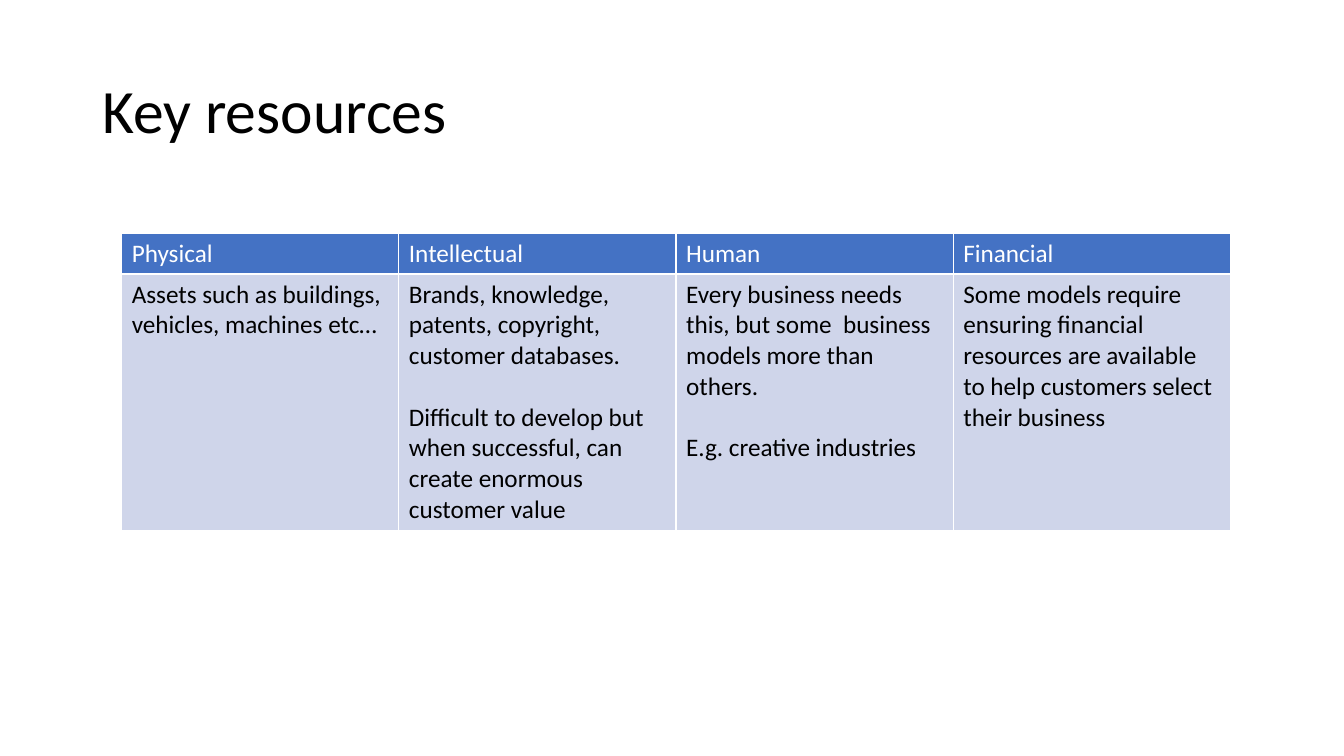
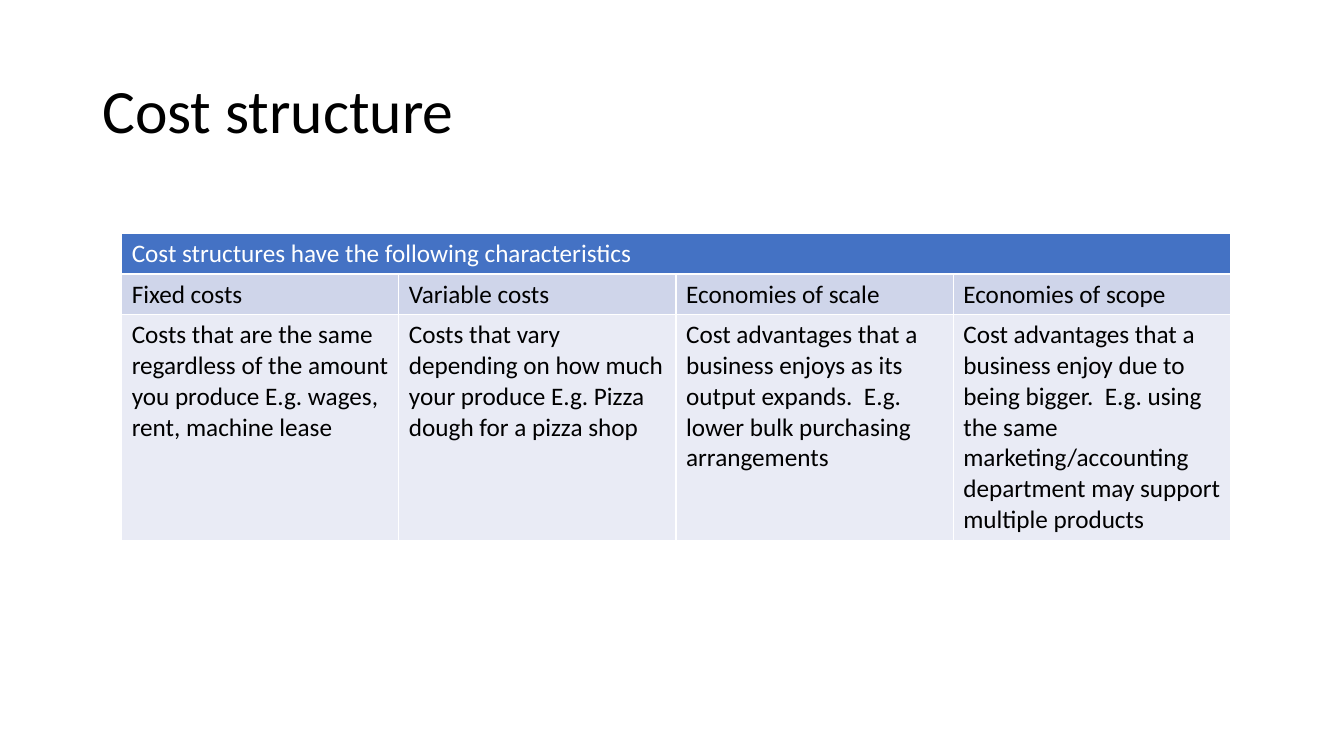
from lxml.etree import SubElement
from pptx import Presentation
from pptx.dml.color import RGBColor
from pptx.enum.text import MSO_ANCHOR
from pptx.oxml.ns import qn
from pptx.util import Pt

COLOURS = {
    "text": "000000",
    "header": "4472C4",
    "light": "FFFFFF",
    "band": "CFD5EA",
    "pale band": "E9EBF5",
}
FONT = "Calibri"
ROW_FILLS = ["header", "band", "pale band"]
COLUMN_WIDTH = 198
HEADING_HEIGHT = 29.2
BLANK_LINE = 22

# Each cell is a list of paragraphs; a row with one cell spans the table.
SLIDES = [
    {
        "title": "Key resources",
        "body height": 183,
        "rows": [
            [["Physical"], ["Intellectual"], ["Human"], ["Financial"]],
            [
                ["Assets such as buildings, vehicles, machines etc…"],
                ["Brands, knowledge, patents, copyright, customer databases.",
                 "Difficult to develop but when successful, can create enormous customer value"],
                ["Every business needs this, but some  business models more than others.",
                 "E.g. creative industries"],
                ["Some models require ensuring financial resources are available "
                 "to help customers select their business"],
            ],
        ],
    },
    {
        "title": "Cost structure",
        "body height": 161,
        "rows": [
            [["Cost structures have the following characteristics"]],
            [["Fixed costs"], ["Variable costs"], ["Economies of scale"], ["Economies of scope"]],
            [
                ["Costs that are the same regardless of the amount you produce "
                 "E.g. wages, rent, machine lease"],
                ["Costs that vary depending on how much your produce "
                 "E.g. Pizza dough for a pizza shop"],
                ["Cost advantages that a business enjoys as its output expands.  "
                 "E.g. lower bulk purchasing arrangements"],
                ["Cost advantages that a business enjoy due to being bigger.  "
                 "E.g. using the same marketing/accounting department "
                 "may support multiple products"],
            ],
        ],
    },
]


def add_span(para, text, size, colour):
    span = para.add_run()
    span.text = text
    span.font.name = FONT
    span.font.size = Pt(size)
    span.font.bold = False
    span.font.color.rgb = RGBColor.from_string(COLOURS[colour])


def style_cell(cell, fill):
    """Give a cell thin white borders and a solid fill."""
    properties = cell._tc.get_or_add_tcPr()
    for side in ("a:lnL", "a:lnR", "a:lnT", "a:lnB"):
        line = SubElement(properties, qn(side), w=str(Pt(1)))
        solid = SubElement(line, qn("a:solidFill"))
        SubElement(solid, qn("a:srgbClr"), val=COLOURS["light"])
    cell.fill.solid()
    cell.fill.fore_color.rgb = RGBColor.from_string(COLOURS[fill])


deck = Presentation()
deck.slide_width = Pt(960)
deck.slide_height = Pt(540)

for content in SLIDES:
    page = deck.slides.add_slide(deck.slide_layouts[6])

    title_box = page.shapes.add_textbox(Pt(66), Pt(28.75), Pt(828), Pt(104.4))
    title_box.text_frame.word_wrap = True
    title_box.text_frame.vertical_anchor = MSO_ANCHOR.MIDDLE
    title_para = title_box.text_frame.paragraphs[0]
    title_para.line_spacing = 0.9
    add_span(title_para, content["title"], 44, "text")

    rows = content["rows"]
    column_count = len(rows[-1])
    heights = [HEADING_HEIGHT] * (len(rows) - 1) + [content["body height"]]
    table = page.shapes.add_table(
        len(rows), column_count, Pt(86.9), Pt(166.5),
        Pt(COLUMN_WIDTH * column_count), Pt(sum(heights)),
    ).table
    table.horz_banding = False
    for column in table.columns:
        column.width = Pt(COLUMN_WIDTH)

    for row_index, (row, height, fill) in enumerate(zip(rows, heights, ROW_FILLS)):
        table.rows[row_index].height = Pt(height)
        for column_index in range(column_count):
            style_cell(table.cell(row_index, column_index), fill)
        if len(row) == 1:
            table.cell(row_index, 0).merge(table.cell(row_index, column_count - 1))

        text_colour = "light" if fill == "header" else "text"
        for column_index, paragraphs in enumerate(row):
            frame = table.cell(row_index, column_index).text_frame
            for index, text in enumerate(paragraphs):
                para = frame.add_paragraph() if index else frame.paragraphs[0]
                if index:
                    para.space_before = Pt(BLANK_LINE)
                add_span(para, text, 18, text_colour)

deck.save("out.pptx")
